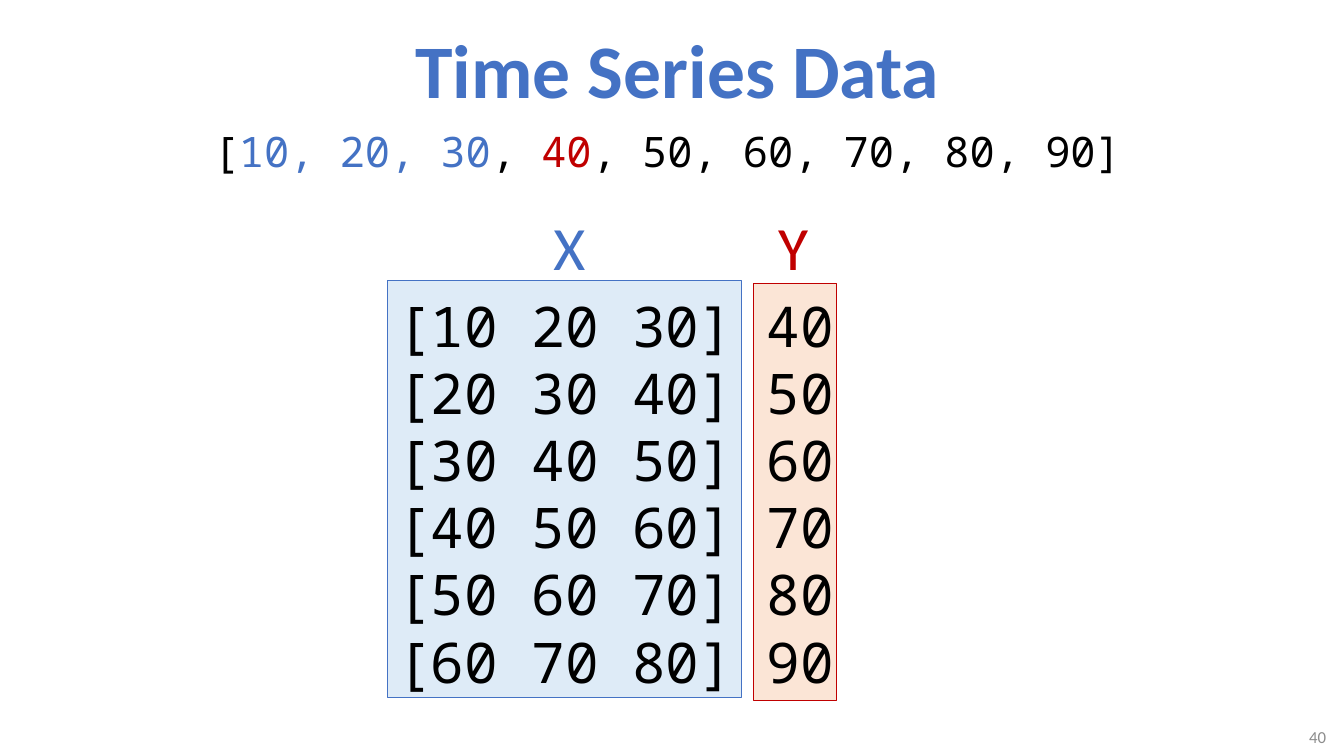
import pptx
import pptx.util
import pptx.dml.color
import pptx.enum.shapes
import pptx.enum.text
from pptx.util import Inches

COLORS = {
    "blue": "4472C4",
    "red": "C00000",
    "black": "000000",
    "gray": "8C8C8C",
    "pale_blue": "DEEBF7",
    "pale_orange": "FBE5D6",
}
SANS = "Calibri"
MONO = "Noto Sans Mono"
ALIGN = pptx.enum.text.PP_ALIGN
ANCHOR = pptx.enum.text.MSO_ANCHOR


def rgb(name):
    return pptx.dml.color.RGBColor.from_string(COLORS[name])


def set_font(font, size, name, color, bold=False):
    font.size = pptx.util.Pt(size)
    font.name = name
    font.bold = bold
    font.color.rgb = rgb(color)


def add_title(s, text, left, top, width, height):
    title = s.shapes.title
    title.left, title.top = Inches(left), Inches(top)
    title.width, title.height = Inches(width), Inches(height)
    tf = title.text_frame
    tf.text = text
    tf.vertical_anchor = ANCHOR.MIDDLE
    p = tf.paragraphs[0]
    p.alignment = ALIGN.CENTER
    set_font(p.font, 54, SANS, "blue", bold=True)


def add_panel(s, left, top, width, height, fill, line):
    sp = s.shapes.add_shape(pptx.enum.shapes.MSO_SHAPE.RECTANGLE, Inches(left),
                            Inches(top), Inches(width), Inches(height))
    sp.shadow.inherit = False
    sp.fill.solid()
    sp.fill.fore_color.rgb = rgb(fill)
    sp.line.color.rgb = rgb(line)
    sp.line.width = pptx.util.Pt(0.5)


def add_text(s, lines, left, top, width, height, size, font, color="black",
             wrap=False, align=ALIGN.LEFT, anchor=ANCHOR.TOP, pitch=None):
    """Each line is a list of (text, color) runs; a color of None keeps the default."""
    sp = s.shapes.add_textbox(Inches(left), Inches(top), Inches(width), Inches(height))
    tf = sp.text_frame
    tf.word_wrap = wrap
    tf.vertical_anchor = anchor
    for i, runs in enumerate(lines):
        p = tf.add_paragraph() if i else tf.paragraphs[0]
        p.alignment = align
        set_font(p.font, size, font, color)
        if pitch:
            p.line_spacing = pptx.util.Pt(pitch)
        for text, run_color in runs:
            r = p.add_run()
            r.text = text
            if run_color:
                r.font.color.rgb = rgb(run_color)


def main():
    prs = pptx.Presentation()
    prs.slide_width, prs.slide_height = Inches(13.33), Inches(7.5)
    s = prs.slides.add_slide(prs.slide_layouts[5])

    # Title and slide number
    add_title(s, "Time Series Data", 2.22, 0.14, 9, 1.08)
    add_text(s, [[("40", None)]], 12.2, 7.18, 1.05, 0.26, 12, SANS, "gray",
             wrap=True, align=ALIGN.RIGHT, anchor=ANCHOR.MIDDLE)

    # Full series, with the first window and its target coloured
    series = [("[", None), ("10, 20, 30", "blue"), (", ", None),
              ("40", "red"), (", 50, 60, 70, 80, 90]", None)]
    add_text(s, [series], 2.02, 1.2, 9.29, 0.61, 30, MONO)

    # Panels behind the inputs and targets
    add_panel(s, 7.47, 2.81, 0.83, 4.14, "pale_orange", "red")
    add_panel(s, 3.84, 2.78, 3.51, 4.14, "pale_blue", "blue")

    # Sliding windows of three values, each followed by its target
    windows = [[(f"[{n} {n + 10} {n + 20}] {n + 30}", None)] for n in range(10, 70, 10)]
    add_text(s, windows, 3.84, 2.84, 5, 4.14, 40, MONO, wrap=True, pitch=48)

    # Column labels
    for label, left, color in (("X", 5.39, "blue"), ("Y", 7.62, "red")):
        add_text(s, [[(label, None)]], left, 2.02, 0.52, 0.84, 44, SANS, color)

    prs.save("out.pptx")


if __name__ == "__main__":
    main()
